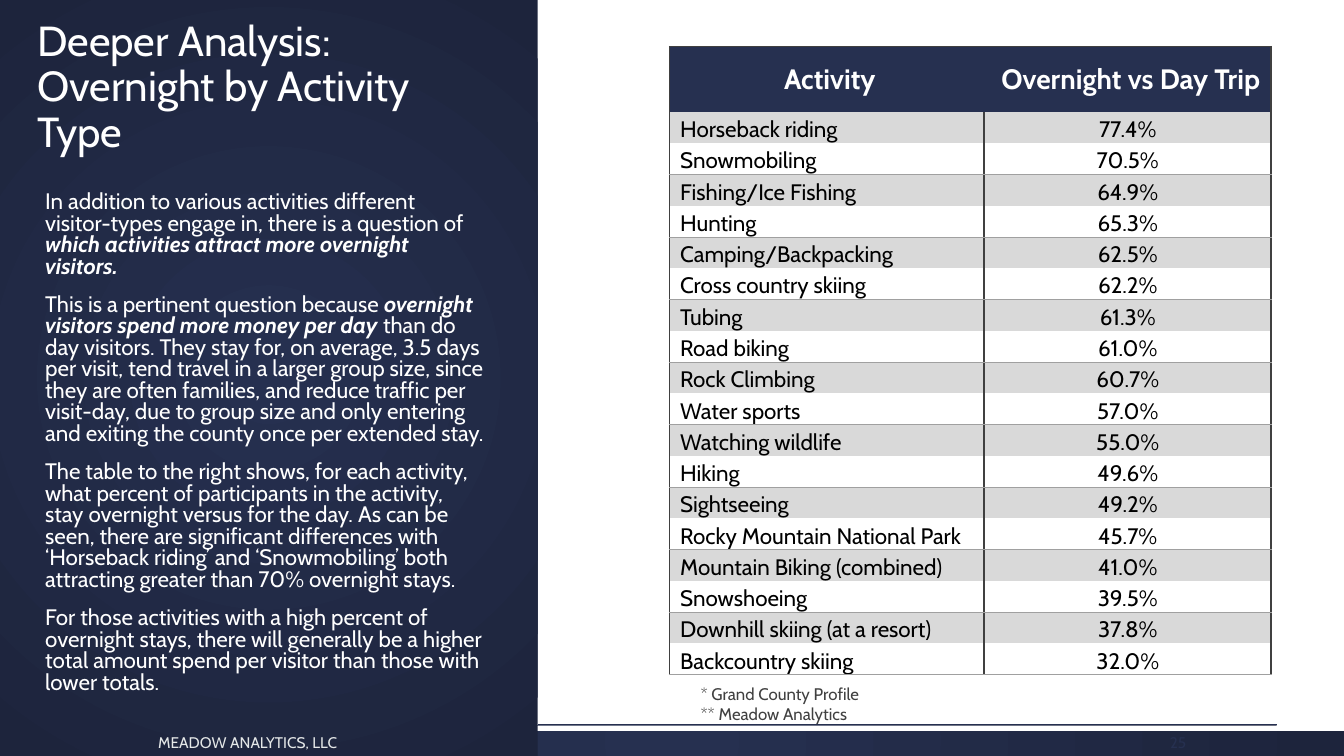
import dataclasses

import lxml.etree
import pptx
import pptx.dml.color
import pptx.enum.shapes
import pptx.enum.text
import pptx.oxml.ns
import pptx.util

ALIGN = pptx.enum.text.PP_ALIGN
ANCHOR = pptx.enum.text.MSO_ANCHOR
qn = pptx.oxml.ns.qn
color = pptx.dml.color.RGBColor.from_string


@dataclasses.dataclass(frozen=True)
class Theme:
    font: str = "Cabin"
    white: str = "FFFFFF"
    black: str = "000000"
    navy: str = "263050"
    deep_navy: str = "1D243C"
    band: str = "D9D9D9"
    border: str = "404040"
    rule: str = "A0A0A0"
    footer: str = "E5E8E8"
    title_size: int = 30
    header_size: int = 20
    body_size: int = 16
    note_size: int = 12
    footer_size: int = 11


class SlideBuilder:
    def __init__(self, presentation, theme):
        self.theme = theme
        self.width = presentation.slide_width
        self.height = presentation.slide_height
        self.slide = presentation.slides.add_slide(presentation.slide_layouts[5])

    def x(self, percent):
        return round(self.width * percent / 100)

    def y(self, percent):
        return round(self.height * percent / 100)

    def box(self, left, top, width, height):
        return self.x(left), self.y(top), self.x(width), self.y(height)

    def add_runs(self, paragraph, runs, size, text_color, align=ALIGN.LEFT):
        paragraph.alignment = align
        for text, bold, italic in runs:
            run = paragraph.add_run()
            run.text = text
            run.font.name = self.theme.font
            run.font.size = pptx.util.Pt(size)
            run.font.bold = bold
            run.font.italic = italic
            run.font.color.rgb = color(text_color)

    def title(self, text, area):
        shape = self.slide.shapes.title
        shape.left, shape.top, shape.width, shape.height = self.box(*area)
        self.slide.shapes._spTree.append(shape._element)
        frame = shape.text_frame
        frame.auto_size = pptx.enum.text.MSO_AUTO_SIZE.NONE
        frame.vertical_anchor = ANCHOR.BOTTOM
        frame.paragraphs[0].line_spacing = 0.9
        self.add_runs(frame.paragraphs[0], [plain(text)], self.theme.title_size, self.theme.white)

    def text(self, paragraphs, area, size, text_color, anchor=ANCHOR.TOP,
             align=ALIGN.LEFT, line_spacing=None, space_before=0):
        frame = self.slide.shapes.add_textbox(*self.box(*area)).text_frame
        frame.word_wrap = True
        frame.vertical_anchor = anchor
        for index, runs in enumerate(paragraphs):
            paragraph = frame.add_paragraph() if index else frame.paragraphs[0]
            paragraph.line_spacing = line_spacing
            paragraph.space_before = pptx.util.Pt(space_before)
            self.add_runs(paragraph, runs, size, text_color, align)

    def rectangle(self, area, fill=None):
        kind = pptx.enum.shapes.MSO_SHAPE.RECTANGLE
        shape = self.slide.shapes.add_shape(kind, *self.box(*area))
        shape.shadow.inherit = False
        shape.line.fill.background()
        if fill:
            shape.fill.solid()
            shape.fill.fore_color.rgb = color(fill)
            return
        shape.fill.gradient()
        for stop, value in zip(shape.fill.gradient_stops, (self.theme.navy, self.theme.deep_navy)):
            stop.color.rgb = color(value)
        gradient = shape._element.spPr.find(qn("a:gradFill"))
        gradient.remove(gradient.find(qn("a:lin")))
        circle = lxml.etree.SubElement(gradient, qn("a:path"), {"path": "circle"})
        lxml.etree.SubElement(circle, qn("a:fillToRect"), dict.fromkeys("ltrb", "50000"))

    def horizontal_line(self, left, right, top, line_color):
        line = self.slide.shapes.add_connector(
            pptx.enum.shapes.MSO_CONNECTOR.STRAIGHT,
            self.x(left), self.y(top), self.x(right), self.y(top))
        line.line.color.rgb = color(line_color)
        line.line.width = pptx.util.Pt(0.75)
        lxml.etree.SubElement(line._element.spPr, qn("a:effectLst"))

    def borders(self, cell, edges):
        properties = cell._tc.get_or_add_tcPr()
        for side in "LRTB":
            line_color, points = edges.get(side, (None, 0))
            width = {"w": str(int(pptx.util.Pt(points)))}
            line = lxml.etree.SubElement(properties, qn(f"a:ln{side}"), width)
            fill = lxml.etree.SubElement(line, qn("a:solidFill" if line_color else "a:noFill"))
            if line_color:
                lxml.etree.SubElement(fill, qn("a:srgbClr"), {"val": line_color})

    def cell_edges(self, row, column):
        side, thin = (self.theme.border, 1.5), (self.theme.border, 1)
        edges = {"L": side if column else thin, "R": side}
        if row == 0:
            edges["T"] = thin
            del edges["L" if column else "R"]
        elif row % 2 == 0:
            edges["B"] = (self.theme.rule, 0.5)
        elif row > 1:
            edges["T"] = (self.theme.rule, 0.5)
        return edges

    def table(self, rows, left, top, columns, header_height, row_height):
        theme = self.theme
        height = header_height + row_height * (len(rows) - 1)
        area = self.box(left, top, sum(columns), height)
        table = self.slide.shapes.add_table(len(rows), len(columns), *area).table
        table.first_row = table.horz_banding = False
        for column, width in zip(table.columns, columns):
            column.width = self.x(width)
        for row, values in enumerate(rows):
            header = row == 0
            table.rows[row].height = self.y(header_height if header else row_height)
            fill = theme.navy if header else theme.band if row % 2 else theme.white
            for column, value in enumerate(values):
                cell = table.cell(row, column)
                named = column == 0 and not header
                cell.margin_left = self.x(0.8 if named else 0.53 if header else 0.08)
                cell.margin_right = self.x(0.08)
                cell.margin_top = self.y(0.8 if header else 0.13)
                cell.margin_bottom = self.y(0.8 if header else 0)
                cell.vertical_anchor = ANCHOR.MIDDLE if header else ANCHOR.BOTTOM
                self.borders(cell, self.cell_edges(row, column))
                cell.fill.solid()
                cell.fill.fore_color.rgb = color(fill)
                self.add_runs(cell.text_frame.paragraphs[0], [(value, header, False)],
                              theme.header_size if header else theme.body_size,
                              theme.white if header else theme.black,
                              ALIGN.LEFT if named else ALIGN.CENTER)


def plain(text):
    return text, False, False


def strong(text):
    return text, True, True


COMMENTARY = [
    [plain("In addition to various activities different visitor-types engage in, there is a question of "),
     strong("which activities attract more overnight visitors.")],
    [plain("This is a pertinent question because "),
     strong("overnight visitors spend more money per day "),
     plain("than do day visitors. They stay for, on average, 3.5 days per visit, tend travel in a larger "
           "group size, since they are often families, and reduce traffic per visit-day, due to group size "
           "and only entering and exiting the county once per extended stay.")],
    [plain("The table to the right shows, for each activity, what percent of participants in the activity, "
           "stay overnight versus for the day. As can be seen, there are significant differences with "
           "‘Horseback riding’ and ‘Snowmobiling’ both attracting greater than 70% overnight stays.")],
    [plain("For those activities with a high percent of overnight stays, there will generally be a higher "
           "total amount spend per visitor than those with lower totals.")],
]
ACTIVITIES = [
    ("Activity", "Overnight vs Day Trip"),
    ("Horseback riding", "77.4%"), ("Snowmobiling", "70.5%"), ("Fishing/Ice Fishing", "64.9%"),
    ("Hunting", "65.3%"), ("Camping/Backpacking", "62.5%"), ("Cross country skiing", "62.2%"),
    ("Tubing", "61.3%"), ("Road biking", "61.0%"), ("Rock Climbing", "60.7%"),
    ("Water sports", "57.0%"), ("Watching wildlife", "55.0%"), ("Hiking", "49.6%"),
    ("Sightseeing", "49.2%"), ("Rocky Mountain National Park", "45.7%"),
    ("Mountain Biking (combined)", "41.0%"), ("Snowshoeing", "39.5%"),
    ("Downhill skiing (at a resort)", "37.8%"), ("Backcountry skiing", "32.0%"),
]


def main():
    presentation = pptx.Presentation()
    presentation.slide_width = pptx.util.Inches(13.33)
    presentation.slide_height = pptx.util.Inches(7.5)
    theme = Theme()
    builder = SlideBuilder(presentation, theme)
    builder.rectangle((0, 96, 100, 4))
    builder.rectangle((0, 96, 100, 0.67), theme.white)
    builder.rectangle((0, 0, 40, 100))
    builder.horizontal_line(40, 95, 95.9, theme.navy)
    builder.title("Deeper Analysis: Overnight by Activity Type", (2.03, 1.6, 35.48, 19.73))
    builder.text(COMMENTARY, (2.63, 24.8, 34.13, 68.27), theme.body_size, theme.white,
                 line_spacing=0.8, space_before=12)
    builder.table(ACTIVITIES, 49.81, 6.13, (23.41, 21.38), 8.67, 4.14)
    builder.text([[plain("* Grand County Profile")], [plain("** Meadow Analytics")]],
                 (51.39, 89.73, 36.76, 6.67), theme.note_size, theme.border)
    for text, left, width, tint, align in (
            ("MEADOW ANALYTICS, LLC", 11.03, 58.74, theme.footer, ALIGN.LEFT),
            ("25", 82, 7, theme.navy, ALIGN.RIGHT)):
        builder.text([[plain(text)]], (left, 96.4, width, 3.47), theme.footer_size, tint,
                     ANCHOR.MIDDLE, align)
    presentation.save("out.pptx")


if __name__ == "__main__":
    main()
